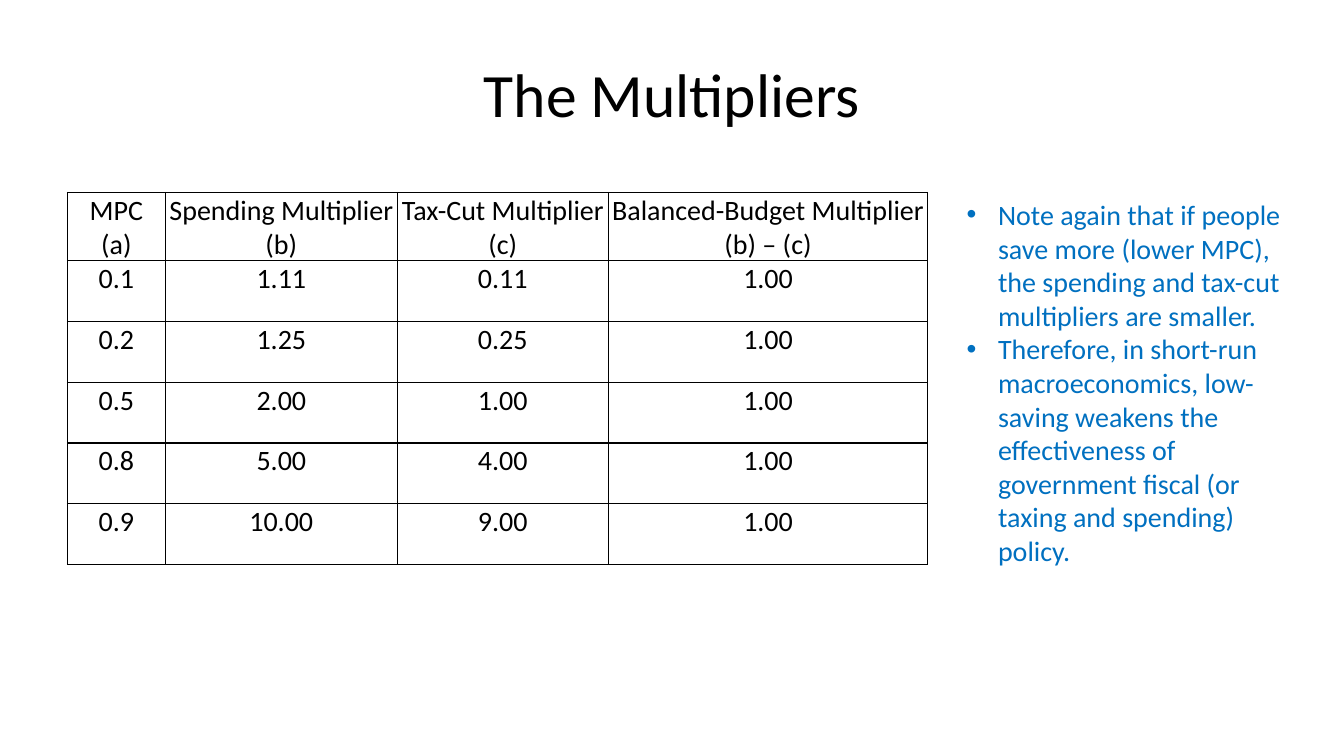
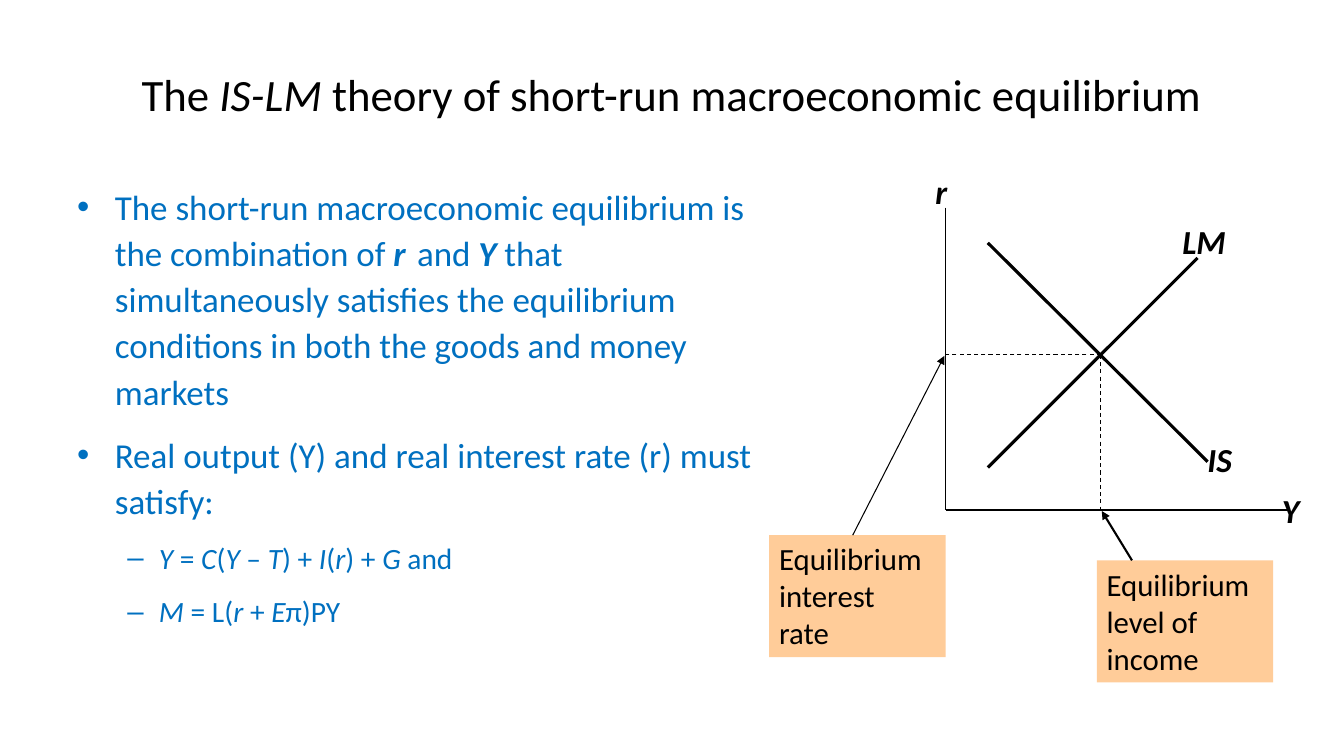
from lxml.etree import SubElement
from pptx import Presentation
from pptx.dml.color import RGBColor
from pptx.enum.dml import MSO_LINE
from pptx.enum.shapes import MSO_CONNECTOR, MSO_SHAPE
from pptx.enum.text import MSO_ANCHOR, PP_ALIGN
from pptx.oxml.ns import qn
from pptx.util import Pt

FONT = "Calibri"
BLACK, BLUE, PEACH = "000000", "0070C0", "FFCC99"


def color(hex_code):
    return RGBColor.from_string(hex_code)


def write(para, text, size=20, ink=BLACK, bold=False, italic=False, align=PP_ALIGN.LEFT):
    """Add text to a paragraph; parts between asterisks are italic."""
    para.alignment = align
    for line_index, line in enumerate(text.split("\n")):
        if line_index:
            para.add_line_break()
        for part_index, part in enumerate(line.split("*")):
            if part:
                span = para.add_run()
                span.text = part
                font = span.font
                font.name, font.size, font.bold = FONT, Pt(size), bold
                font.italic = italic or part_index % 2 == 1
                font.color.rgb = color(ink)


def add_bullet(para, mark, indent, hanging):
    props = para._p.get_or_add_pPr()
    props.set("marL", str(Pt(indent)))
    props.set("indent", str(-Pt(hanging)))
    SubElement(props, qn("a:buFont")).set("typeface", "Arial")
    SubElement(props, qn("a:buChar")).set("char", mark)


def add_border(cell, width=1):
    props = cell._tc.get_or_add_tcPr()
    for index, side in enumerate(("a:lnL", "a:lnR", "a:lnT", "a:lnB")):
        edge = props.makeelement(qn(side), {"w": str(Pt(width))})
        fill = SubElement(edge, qn("a:solidFill"))
        SubElement(fill, qn("a:srgbClr")).set("val", BLACK)
        props.insert(index, edge)


class Lecture:
    """Holds the deck, its style and the current page."""

    def __init__(self):
        self.deck = Presentation()
        self.deck.slide_width, self.deck.slide_height = Pt(960), Pt(540)

    def new_page(self, title, size):
        self.page = self.deck.slides.add_slide(self.deck.slide_layouts[6])
        frame = self.text_box(48, 21.6, 864, 90)
        frame.vertical_anchor = MSO_ANCHOR.MIDDLE
        write(frame.paragraphs[0], title, size=size, align=PP_ALIGN.CENTER)

    def text_box(self, left, top, width, height):
        box = self.page.shapes.add_textbox(Pt(left), Pt(top), Pt(width), Pt(height))
        box.text_frame.word_wrap = True
        return box.text_frame

    def bullets(self, place, items, line_spacing=1.0, gap=0.0):
        """Each item is (spans, size, mark, indent, hanging); gap is a share of the size."""
        frame = self.text_box(*place)
        for index, (spans, size, mark, indent, hanging) in enumerate(items):
            para = frame.add_paragraph() if index else frame.paragraphs[0]
            para.line_spacing = line_spacing
            para.space_before = Pt(size * gap)
            add_bullet(para, mark, indent, hanging)
            for text, changes in spans:
                write(para, text, **{"size": size, "ink": BLUE, **changes})

    def label(self, text, left, top, width, align=PP_ALIGN.LEFT):
        frame = self.text_box(left, top, width, 36)
        write(frame.paragraphs[0], text, size=24, bold=True, italic=True, align=align)

    def table(self, left, top, widths, row_height, rows):
        shape = self.page.shapes.add_table(
            len(rows), len(widths), Pt(left), Pt(top), Pt(sum(widths)), Pt(row_height * len(rows)))
        table = shape.table
        table.first_row = table.horz_banding = False
        for column, width in zip(table.columns, widths):
            column.width = Pt(width)
        for row, texts in zip(table.rows, rows):
            row.height = Pt(row_height)
            for cell, text in zip(row.cells, texts):
                cell.margin_left = cell.margin_right = cell.margin_top = Pt(0.75)
                cell.margin_bottom = 0
                cell.fill.background()
                add_border(cell)
                write(cell.text_frame.paragraphs[0], text, align=PP_ALIGN.CENTER)

    def line(self, start, end, width=1.0, dashed=False, arrow=False):
        connector = self.page.shapes.add_connector(
            MSO_CONNECTOR.STRAIGHT, *(Pt(value) for value in (*start, *end)))
        connector.line.color.rgb = color(BLACK)
        connector.line.width = Pt(width)
        if dashed:
            connector.line.dash_style = MSO_LINE.DASH
        props = connector._element.spPr
        if arrow:
            SubElement(props.find(qn("a:ln")), qn("a:tailEnd")).set("type", "triangle")
        SubElement(props, qn("a:effectLst"))

    def callout(self, lines, left, top):
        box = self.page.shapes.add_shape(
            MSO_SHAPE.RECTANGLE, Pt(left), Pt(top), Pt(126), Pt(87.2))
        box.shadow.inherit = False
        box.fill.solid()
        box.fill.fore_color.rgb = color(PEACH)
        box.line.fill.background()
        frame = box.text_frame
        frame.word_wrap = True
        frame.vertical_anchor = MSO_ANCHOR.TOP
        for index, text in enumerate(lines):
            para = frame.add_paragraph() if index else frame.paragraphs[0]
            write(para, text, size=22)


def multipliers(lecture):
    lecture.new_page("The Multipliers", size=44)
    lecture.table(48.2, 137.5, (70, 165.6, 150.8, 228.2), 43.4, (
        ("MPC\n(a)", "Spending Multiplier\n(b)", "Tax-Cut Multiplier\n(c)",
         "Balanced-Budget Multiplier\n(b) – (c)"),
        ("0.1", "1.11", "0.11", "1.00"),
        ("0.2", "1.25", "0.25", "1.00"),
        ("0.5", "2.00", "1.00", "1.00"),
        ("0.8", "5.00", "4.00", "1.00"),
        ("0.9", "10.00", "9.00", "1.00"),
    ))
    notes = (
        "Note again that if people save more (lower MPC), the spending and tax-cut "
        "multipliers are smaller.",
        "Therefore, in short-run macroeconomics, low-saving weakens the effectiveness of "
        "government fiscal (or taxing and spending) policy.",
    )
    lecture.bullets((683.3, 137.5, 257.8, 273.6),
                    [([(note, {})], 20, "•", 22.5, 22.5) for note in notes])


def equilibrium(lecture):
    lecture.new_page("The *IS-LM* theory of short-run macroeconomic equilibrium", size=32)

    # Explanation and equations
    strong = {"bold": True, "italic": True}
    definition = [
        ("The short-run macroeconomic equilibrium is the combination of ", {}),
        ("r", strong), (" ", {"size": 11}), (" and ", {}), ("Y", strong),
        (" that simultaneously satisfies the equilibrium conditions in both the goods "
         "and money markets", {}),
    ]
    condition = [("Real output (Y) and real interest rate (r) must satisfy:", {})]
    equations = ("*Y* = *C*(*Y* – *T*) + *I*(*r*) + *G* and", "*M* = L(*r* + *E*π)PY")
    items = [(spans, 25, "•", 27, 27) for spans in (definition, condition)]
    items += [([(text, {})], 21, "–", 58.5, 22.5) for text in equations]
    lecture.bullets((48, 126, 501, 356.4), items, line_spacing=1.1, gap=0.5)

    # Axes
    origin_x, origin_y = 675.4, 364.3
    lecture.line((origin_x, 148.3), (origin_x, origin_y))
    lecture.line((origin_x, origin_y), (921.6, origin_y))
    lecture.label("Y ", 903.6, 346.3, 42, PP_ALIGN.CENTER)
    lecture.label("r", 657.4, 118.3, 30, PP_ALIGN.CENTER)

    # Curves
    lecture.line((705.6, 173.5), (862.6, 329.8), width=2.25)
    lecture.label("IS", 855.4, 310.3, 54)
    lecture.line((705.6, 334), (855.4, 184.3), width=2.25)
    lecture.label("LM", 837.4, 154.3, 54)

    # Equilibrium point and its callouts
    point = point_x, point_y = 786.4, 253.5
    for foot in ((origin_x, point_y), (point_x, origin_y)):
        lecture.line(point, foot, width=0.75, dashed=True)
    lecture.callout(("Equilibrium", "interest", "rate"), 549.4, 382.3)
    lecture.callout(("Equilibrium", "level of", "income"), 783.4, 400.3)
    lecture.line((808.6, 400.3), (787, 365), width=1.5, arrow=True)
    lecture.line((609.1, 382.3), (674.6, 254.2), width=0.75, arrow=True)


def main():
    lecture = Lecture()
    multipliers(lecture)
    equilibrium(lecture)
    lecture.deck.save("out.pptx")


if __name__ == "__main__":
    main()
